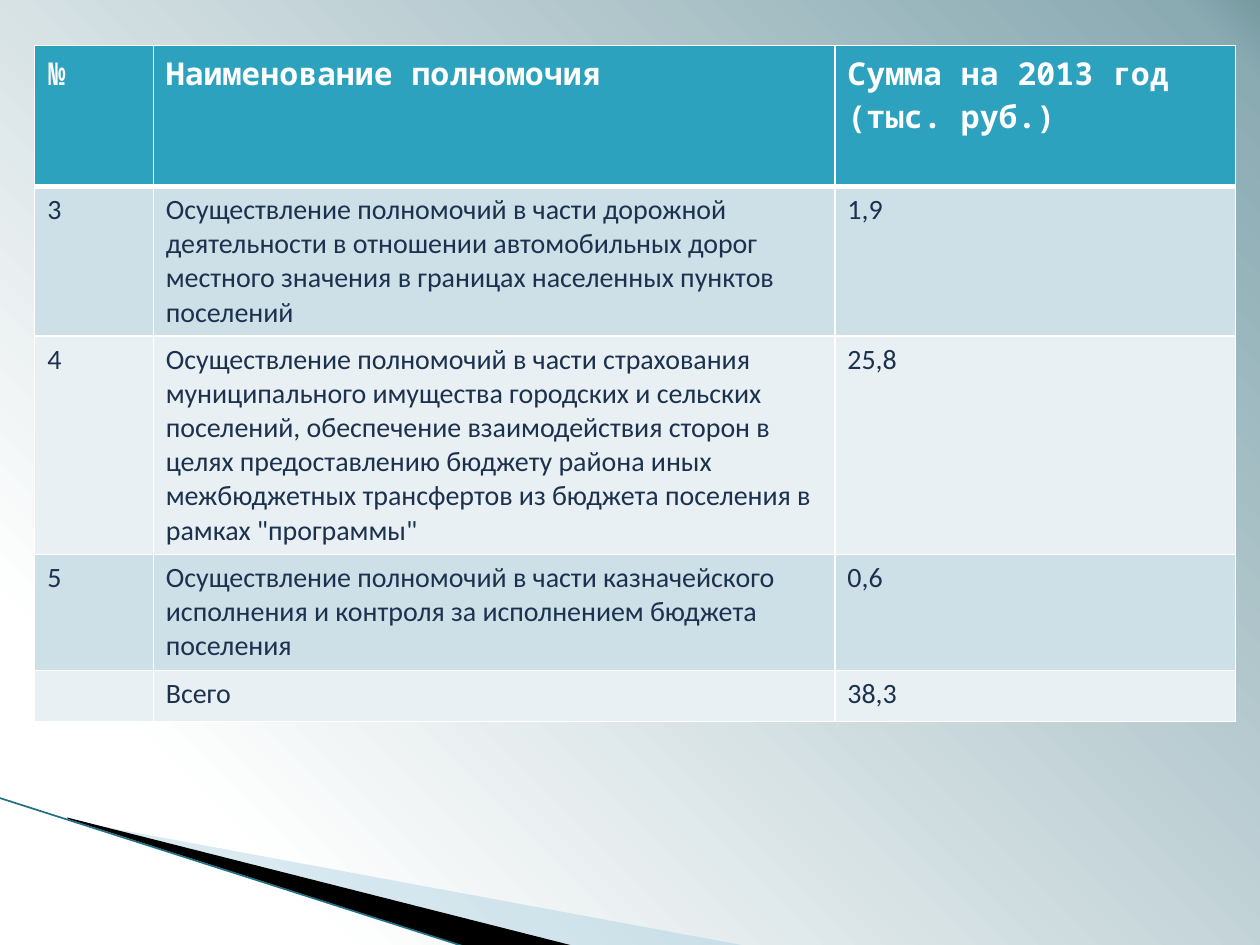
from dataclasses import dataclass

from lxml.etree import SubElement
from pptx import Presentation
from pptx.dml.color import RGBColor
from pptx.enum.shapes import MSO_CONNECTOR
from pptx.oxml.ns import qn
from pptx.util import Cm, Pt


@dataclass(frozen=True)
class Theme:
    white: str = "FFFFFF"
    header: str = "2DA2BF"
    bands: tuple = ("CDE0E8", "E8F0F4")
    text: str = "1C314E"
    wedge_light: str = "A0CBDC"
    wedge_dark: str = "000000"
    edge: str = "1F7083"
    backdrop: tuple = ((15, "FFFFFF"), (96, "8BABB3"), (100, "7799A0"))
    header_font: str = "Noto Sans Mono"
    body_font: str = "Calibri"
    header_size: int = 18
    body_size: int = 16


class SlideBuilder:
    def __init__(self, slide, theme):
        self.s = slide
        self.theme = theme

    def background(self, stops, angle):
        fill = self.s.background.fill
        fill.gradient()
        fill.gradient_angle = angle
        gs_list = self.s.element.find(".//" + qn("a:gsLst"))
        for old in list(gs_list):
            gs_list.remove(old)
        for position, color in stops:
            gs = SubElement(gs_list, qn("a:gs"), pos=str(position * 1000))
            SubElement(gs, qn("a:srgbClr"), val=color)

    def wedge(self, points, color, opacity=100):
        corners = [(Cm(x), Cm(y)) for x, y in points]
        builder = self.s.shapes.build_freeform(*corners[0])
        builder.add_line_segments(corners[1:], close=True)
        sp = builder.convert_to_shape()
        sp.shadow.inherit = False
        sp.line.fill.background()
        sp.fill.solid()
        sp.fill.fore_color.rgb = RGBColor.from_string(color)
        if opacity < 100:
            clr = sp.element.spPr.find(".//" + qn("a:srgbClr"))
            SubElement(clr, qn("a:alpha"), val=str(opacity * 1000))

    def line(self, start, end, color, width):
        ends = [Cm(v) for v in (*start, *end)]
        cxn = self.s.shapes.add_connector(MSO_CONNECTOR.STRAIGHT, *ends)
        cxn.line.color.rgb = RGBColor.from_string(color)
        cxn.line.width = Pt(width)
        SubElement(cxn.element.spPr, qn("a:effectLst"))

    def borders(self, cell, **widths):
        tc_pr = cell._tc.get_or_add_tcPr()
        for i, side in enumerate("LRTB"):
            ln = tc_pr.makeelement(
                qn("a:ln" + side), {"w": str(Pt(widths.get(side, 1)))})
            tc_pr.insert(i, ln)
            fill = SubElement(ln, qn("a:solidFill"))
            SubElement(fill, qn("a:srgbClr"), val=self.theme.white)

    def cell(self, cell, text, fill, color, font, size, bold):
        cell.fill.solid()
        cell.fill.fore_color.rgb = RGBColor.from_string(fill)
        if not text:
            return
        p = cell.text_frame.paragraphs[0]
        p.text = text
        for r in p.runs:
            r.font.name = font
            r.font.size = Pt(size)
            r.font.bold = bold
            r.font.color.rgb = RGBColor.from_string(color)

    def table(self, rows, left, top, widths, heights):
        t = self.theme
        table = self.s.shapes.add_table(
            len(rows), len(widths), Cm(left), Cm(top),
            Cm(sum(widths)), Cm(sum(heights))).table
        for column, width in zip(table.columns, widths):
            column.width = Cm(width)
        for i, (row, height) in enumerate(zip(rows, heights)):
            table.rows[i].height = Cm(height)
            if i == 0:
                style = (t.header, t.white, t.header_font, t.header_size, True)
            else:
                band = t.bands[(i - 1) % 2]
                style = (band, t.text, t.body_font, t.body_size, False)
            for j, text in enumerate(row):
                cell = table.cell(i, j)
                self.cell(cell, text, *style)
                # A thick rule separates the header from the body
                self.borders(cell, T=3 if i == 1 else 1, B=3 if i == 0 else 1)


ROWS = [
    ("№", "Наименование полномочия", "Сумма на 2013 год (тыс. руб.)"),
    ("3", "Осуществление полномочий в части дорожной деятельности в отношении "
          "автомобильных дорог местного значения в границах населенных "
          "пунктов поселений", "1,9"),
    ("4", "Осуществление полномочий в части страхования муниципального "
          "имущества городских и сельских поселений, обеспечение "
          "взаимодействия сторон в целях предоставлению бюджету района иных "
          "межбюджетных трансфертов из бюджета поселения в рамках "
          '"программы"', "25,8"),
    ("5", "Осуществление полномочий в части казначейского исполнения и "
          "контроля за исполнением бюджета поселения", "0,6"),
    ("", "Всего", "38,3"),
]


def main():
    prs = Presentation()
    prs.slide_width, prs.slide_height = Cm(25.4), Cm(19.05)
    theme = Theme()
    slide = SlideBuilder(prs.slides.add_slide(prs.slide_layouts[6]), theme)

    # Backdrop with the corner wedges
    slide.background(theme.backdrop, 45)
    slide.wedge([(1.4, 16.54), (15.11, 19.08), (11.58, 19.08), (1.4, 16.51)],
                theme.wedge_light, opacity=40)
    slide.wedge([(1.35, 16.48), (11.61, 19.08), (9.45, 19.1), (1.37, 16.51)],
                theme.wedge_dark)
    slide.line((-0.03, 16.08), (9.42, 19.1), theme.edge, 0.95)

    # Table of delegated powers
    slide.table(ROWS, 0.7, 0.92, widths=(2.39, 13.74, 8.08),
                heights=(2.84, 3, 4.4, 2.34, 1.03))

    prs.save("out.pptx")


if __name__ == "__main__":
    main()
